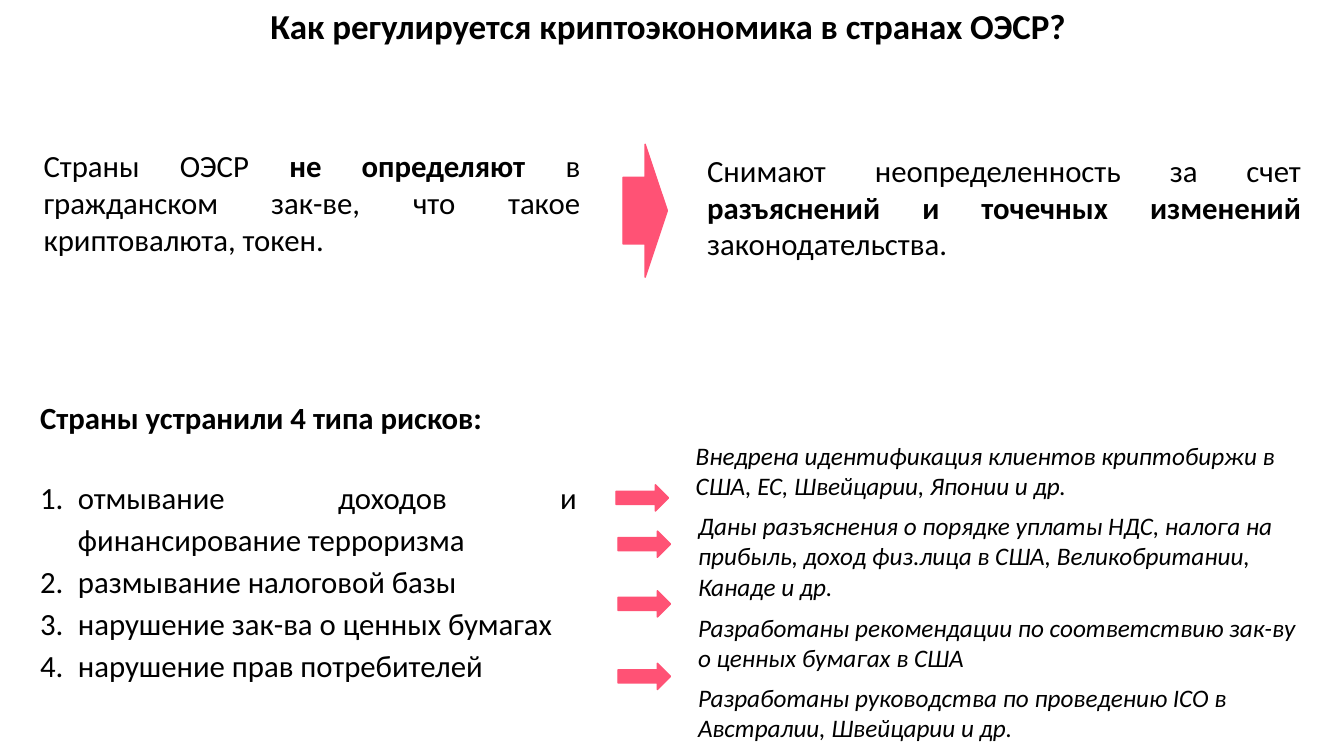
import pptx
import pptx.dml.color
import pptx.enum.shapes
import pptx.enum.text
import pptx.oxml.ns
import pptx.util
from lxml import etree

Pt = pptx.util.Pt
ALIGN = pptx.enum.text.PP_ALIGN
BLACK, PINK = "000000", "FF5275"


def color(hex_string):
    return pptx.dml.color.RGBColor.from_string(hex_string)


def apply(target, values):
    for name, value in values.items():
        setattr(target, name, value)


class SlideBuilder:
    font_name = "Calibri"

    def __init__(self, slide):
        self.shapes = slide.shapes

    def text(self, left, top, width, height, paragraphs, size, align=ALIGN.LEFT, **font):
        """Add a text box; each paragraph is a list of (text, font values) runs."""
        box = self.shapes.add_textbox(Pt(left), Pt(top), Pt(width), Pt(height))
        frame = box.text_frame
        apply(frame, {"word_wrap": True,
                      "auto_size": pptx.enum.text.MSO_AUTO_SIZE.SHAPE_TO_FIT_TEXT})
        for index, runs in enumerate(paragraphs):
            paragraph = frame.add_paragraph() if index else frame.paragraphs[0]
            paragraph.alignment = align
            for words, extra in runs:
                run = paragraph.add_run()
                run.text = words
                apply(run.font, {"name": self.font_name, "size": Pt(size), **font, **extra})
                run.font.color.rgb = color(BLACK)
        return frame

    def number(self, paragraph, indent):
        properties = paragraph._p.get_or_add_pPr()
        properties.set("marL", str(Pt(indent)))
        properties.set("indent", str(-Pt(indent)))
        etree.SubElement(properties, pptx.oxml.ns.qn("a:buAutoNum"), type="arabicPeriod")

    def arrow(self, left, top, width, height):
        arrow = self.shapes.add_shape(pptx.enum.shapes.MSO_SHAPE.RIGHT_ARROW,
                                      Pt(left), Pt(top), Pt(width), Pt(height))
        arrow.shadow.inherit = False
        arrow.fill.solid()
        arrow.fill.fore_color.rgb = color(PINK)
        arrow.line.color.rgb = color(PINK)
        arrow.line.width = Pt(1)


RISKS = [
    "отмывание доходов и финансирование терроризма",
    "размывание налоговой базы",
    "нарушение зак-ва о ценных бумагах",
    "нарушение прав потребителей",
]

# arrow left, arrow top, text left, text top, text width, text height, text
MEASURES = [
    (440, 346.3, 489.8, 311, 438.5, 51,
     "Внедрена идентификация клиентов криптобиржи в США, ЕС, Швейцарии, Японии и др."),
    (441.4, 379.4, 491.5, 361, 447, 73,
     "Даны разъяснения о порядке уплаты НДС, налога на прибыль, доход физ.лица "
     "в США, Великобритании, Канаде и др."),
    (441.4, 422, 491.5, 433.5, 447, 51,
     "Разработаны рекомендации по соответствию зак-ву о ценных бумагах в США"),
    (441.4, 473.8, 491.5, 484, 447, 51,
     "Разработаны руководства по проведению ICO в Австралии, Швейцарии и др."),
]


def main():
    deck = pptx.Presentation()
    apply(deck, {"slide_width": Pt(960), "slide_height": Pt(540)})
    builder = SlideBuilder(deck.slides.add_slide(deck.slide_layouts[6]))

    builder.text(0, 0, 960, 37.5,
                 [[("Как регулируется криптоэкономика в странах ОЭСР? ", {})]],
                 25, ALIGN.CENTER, bold=True)

    builder.text(24, 101, 397.5, 87, [[
        ("Страны ОЭСР ", {}),
        ("не определяют ", {"bold": True}),
        ("в гражданском зак-ве, что такое криптовалюта, токен.", {}),
    ]], 22, ALIGN.JUSTIFY)
    builder.arrow(445, 103, 31.7, 95)
    builder.text(498, 104.5, 438.5, 87, [[
        ("Снимают неопределенность за счет ", {}),
        ("разъяснений и точечных изменений ", {"bold": True}),
        ("законодательства.", {}),
    ]], 22, ALIGN.JUSTIFY)

    risk_runs = [[("Страны устранили 4 типа рисков:", {"bold": True})]]
    risk_runs += [[(risk, {})] for risk in RISKS]
    risk_list = builder.text(21.6, 281.5, 397.5, 211, risk_runs, 22, ALIGN.JUSTIFY)
    heading, *items = risk_list.paragraphs
    heading.space_after = Pt(26.8)
    for item in items:
        item.line_spacing = 1.14
        builder.number(item, 27)

    for arrow_left, arrow_top, left, top, width, height, measure in MEASURES:
        builder.arrow(arrow_left, arrow_top, 37.5, 18.7)
        builder.text(left, top, width, height, [[(measure, {})]], 18, italic=True)

    deck.save("out.pptx")


if __name__ == "__main__":
    main()
